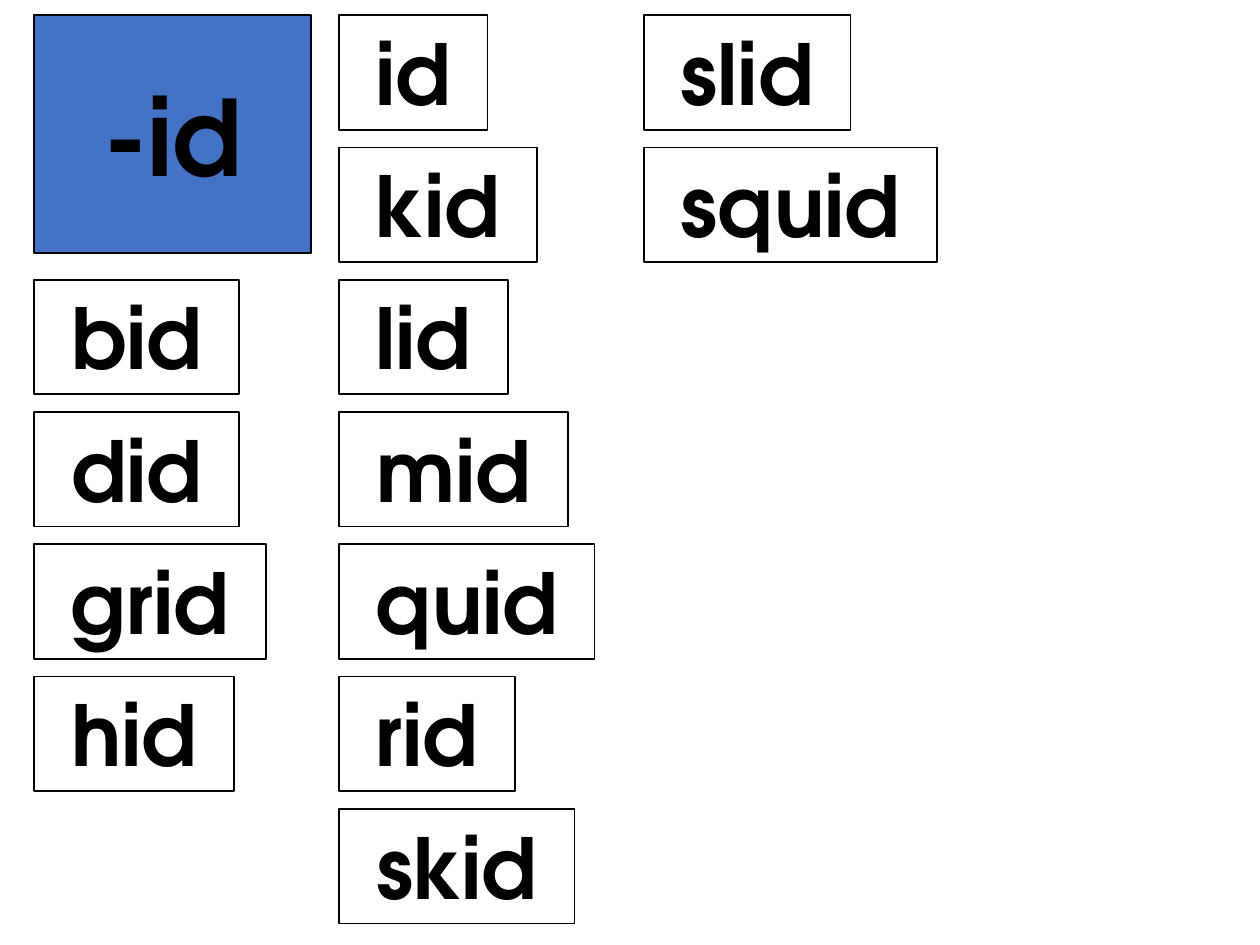
from pptx import Presentation
from pptx.dml.color import RGBColor
from pptx.enum.shapes import MSO_SHAPE
from pptx.enum.text import MSO_ANCHOR, MSO_AUTO_SIZE, PP_ALIGN
from pptx.util import Inches, Pt

COLORS = {"ink": "000000", "card": "FFFFFF", "head": "4472C4"}
FONT = "TeX Gyre Adventor"
LEFT, TOP = 0.27, 0.12
COL_STEP, ROW_STEP = 2.42, 1.05
CARD_HIGH = 0.91

COLUMNS = [
    (2, [("bid", 1.63), ("did", 1.63), ("grid", 1.84), ("hid", 1.59)]),
    (0, [("id", 1.18), ("kid", 1.57), ("lid", 1.34), ("mid", 1.82),
         ("quid", 2.03), ("rid", 1.4), ("skid", 1.87)]),
    (0, [("slid", 1.64), ("squid", 2.33)]),
]


def color(name):
    return RGBColor.from_string(COLORS[name])


def add_box(slide, left, top, wide, high, fill):
    box = slide.shapes.add_shape(
        MSO_SHAPE.RECTANGLE, Inches(left), Inches(top), Inches(wide), Inches(high))
    box.shadow.inherit = False
    box.fill.solid()
    box.fill.fore_color.rgb = color(fill)
    box.line.color.rgb = color("ink")
    box.line.width = Pt(1)
    return box


def add_text(box, text, size=48, anchor=MSO_ANCHOR.TOP, wrap=False,
             fit=MSO_AUTO_SIZE.SHAPE_TO_FIT_TEXT):
    frame = box.text_frame
    frame.word_wrap = wrap
    frame.auto_size = fit
    frame.vertical_anchor = anchor
    para = frame.paragraphs[0]
    para.alignment = PP_ALIGN.CENTER
    run = para.add_run()
    run.text = text
    run.font.name = FONT
    run.font.size = Pt(size)
    run.font.bold = True
    run.font.color.rgb = color("ink")


def add_head(slide, left, top, wide, high):
    box = add_box(slide, left, top, wide, high, "head")
    add_text(box, "-id", size=60, anchor=MSO_ANCHOR.MIDDLE, wrap=True,
             fit=MSO_AUTO_SIZE.NONE)


def add_words(slide, left, top, words):
    for row, (word, wide) in enumerate(words):
        box = add_box(slide, left, top + row * ROW_STEP, wide, CARD_HIGH, "card")
        add_text(box, f" {word} ")


def main():
    deck = Presentation()
    deck.slide_width, deck.slide_height = Inches(10), Inches(7.5)
    slide = deck.slides.add_slide(deck.slide_layouts[6])
    for col, (start, words) in enumerate(COLUMNS):
        add_words(slide, LEFT + col * COL_STEP, TOP + start * ROW_STEP, words)
    add_head(slide, LEFT, TOP, 2.2, 1.89)
    deck.save("out.pptx")


if __name__ == "__main__":
    main()
